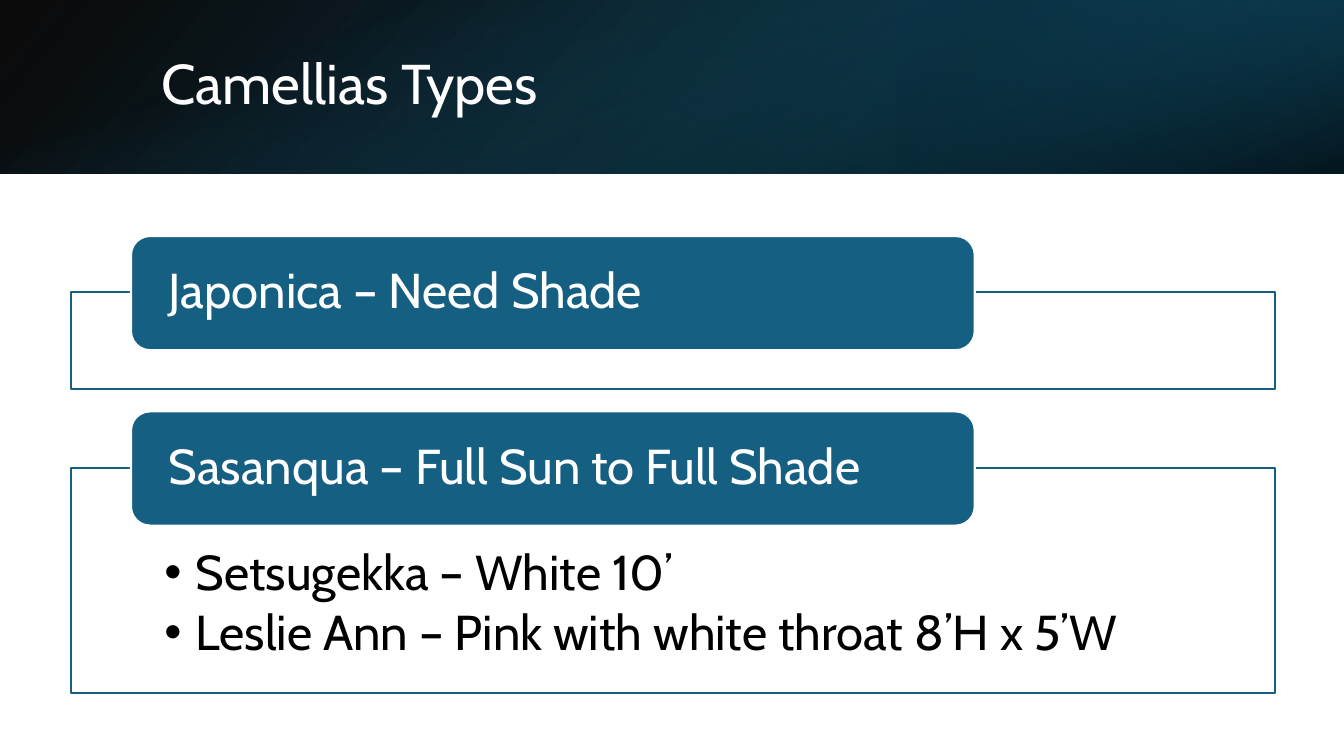
from lxml.etree import SubElement
from pptx import Presentation
from pptx.dml.color import RGBColor
from pptx.enum.shapes import MSO_SHAPE as Shape
from pptx.enum.text import MSO_ANCHOR as Anchor, PP_ALIGN as Align
from pptx.oxml.ns import qn
from pptx.util import Inches, Pt

WHITE = RGBColor(0xFF, 0xFF, 0xFF)
BLACK = RGBColor(0x00, 0x00, 0x00)
BLUE = RGBColor(0x15, 0x60, 0x82)
DEEP_BLUE = RGBColor(0x10, 0x48, 0x62)
NIGHT_BLUE = RGBColor(0x0B, 0x30, 0x41)

BAND_HEIGHT = 22.93
FRAME_LEFT, FRAME_WIDTH = 5.25, 89.6
LABEL_LEFT, LABEL_WIDTH, LABEL_HEIGHT = 9.75, 62.78, 15.1
LABEL_RISE = 7.45


def write_text(shape, lines, size, color, margins, anchor=Anchor.MIDDLE,
               bullet=None, indent=0, space_after=0):
    frame = shape.text_frame
    frame.word_wrap = True
    frame.vertical_anchor = anchor
    (frame.margin_left, frame.margin_top,
     frame.margin_right, frame.margin_bottom) = map(Inches, margins)
    for number, line in enumerate(lines):
        paragraph = frame.add_paragraph() if number else frame.paragraphs[0]
        paragraph.alignment = Align.LEFT
        paragraph.line_spacing = 0.9
        paragraph.space_after = Pt(space_after)
        run = paragraph.add_run()
        run.text = line
        run.font.name = "Cabin"
        run.font.size = Pt(size)
        run.font.color.rgb = color
        if bullet:
            properties = paragraph._p.get_or_add_pPr()
            properties.set("marL", str(Inches(indent)))
            properties.set("indent", str(-Inches(indent)))
            SubElement(properties, qn("a:buFont"), typeface="Arial")
            SubElement(properties, qn("a:buChar"), char=bullet)


class SlideBuilder:
    def __init__(self, presentation):
        self.width = presentation.slide_width
        self.height = presentation.slide_height
        self.slide = presentation.slides.add_slide(presentation.slide_layouts[6])

    def place(self, left, top, width, height):
        return (round(self.width * left / 100), round(self.height * top / 100),
                round(self.width * width / 100), round(self.height * height / 100))

    def block(self, kind, box, fill, line, alpha=100):
        shape = self.slide.shapes.add_shape(kind, *self.place(*box))
        shape.shadow.inherit = False
        shape.fill.solid()
        shape.fill.fore_color.rgb = fill
        if alpha < 100:
            color = shape._element.spPr.find(qn("a:solidFill"))[0]
            SubElement(color, qn("a:alpha"), val=str(alpha * 1000))
        shape.line.color.rgb = line
        shape.line.width = Pt(1.5)
        return shape

    def band(self, left, width, stops, angle, rotation=0, flip=False):
        x, y, wide, high = self.place(left, 0, width, BAND_HEIGHT)
        if rotation == 90:
            x, y = x + (wide - high) // 2, y + (high - wide) // 2
            wide, high = high, wide
        shape = self.slide.shapes.add_shape(Shape.RECTANGLE, x, y, wide, high)
        shape.shadow.inherit = False
        shape.rotation = rotation
        shape.line.fill.background()
        shape.fill.gradient()
        if flip:
            shape._element.spPr.find(qn("a:xfrm")).set("flipH", "1")
        gradient = shape._element.spPr.find(qn("a:gradFill"))
        for child in list(gradient):
            gradient.remove(child)
        stop_list = SubElement(gradient, qn("a:gsLst"))
        for position, color, alpha in stops:
            stop = SubElement(stop_list, qn("a:gs"), pos=str(position * 1000))
            value = SubElement(stop, qn("a:srgbClr"), val=str(color))
            SubElement(value, qn("a:alpha"), val=str(alpha * 1000))
        SubElement(gradient, qn("a:lin"), ang=str(angle * 60000), scaled="0")

    def title(self, text):
        box = self.slide.shapes.add_textbox(*self.place(11.25, 5.07, 82.35, 12.8))
        write_text(box, [text], size=40, color=WHITE, margins=(0.1, 0.05, 0.1, 0.05))

    def section(self, top, height, heading, items=()):
        frame = self.block(Shape.RECTANGLE, (FRAME_LEFT, top, FRAME_WIDTH, height),
                           WHITE, BLUE, alpha=90)
        if items:
            write_text(frame, items, size=35, color=BLACK,
                       margins=(0.93, 0.8, 0.93, 0.27), anchor=Anchor.TOP,
                       bullet="•", indent=0.31, space_after=5)
        label = self.block(Shape.ROUNDED_RECTANGLE,
                           (LABEL_LEFT, top - LABEL_RISE, LABEL_WIDTH, LABEL_HEIGHT),
                           BLUE, WHITE)
        write_text(label, [heading], size=35, color=WHITE, margins=(0.32, 0, 0.32, 0))


def main():
    presentation = Presentation()
    presentation.slide_width = Inches(13.33)
    presentation.slide_height = Inches(7.5)
    builder = SlideBuilder(presentation)
    builder.band(0, 100, [(0, BLACK, 96), (100, DEEP_BLUE, 100)], 140, flip=True)
    builder.band(66.67, 33.33, [(19, NIGHT_BLUE, 68), (100, BLUE, 79)], 320,
                 rotation=180, flip=True)
    builder.band(0, 100, [(23, BLUE, 0), (99, BLACK, 74)], 340, rotation=90)
    builder.title("Camellias Types")
    builder.section(38.67, 12.85, "Japonica – Need Shade")
    builder.section(61.87, 29.75, "Sasanqua – Full Sun to Full Shade",
                    ["Setsugekka – White 10’",
                     "Leslie Ann – Pink with white throat 8’H x 5’W"])
    presentation.save("out.pptx")


if __name__ == "__main__":
    main()
